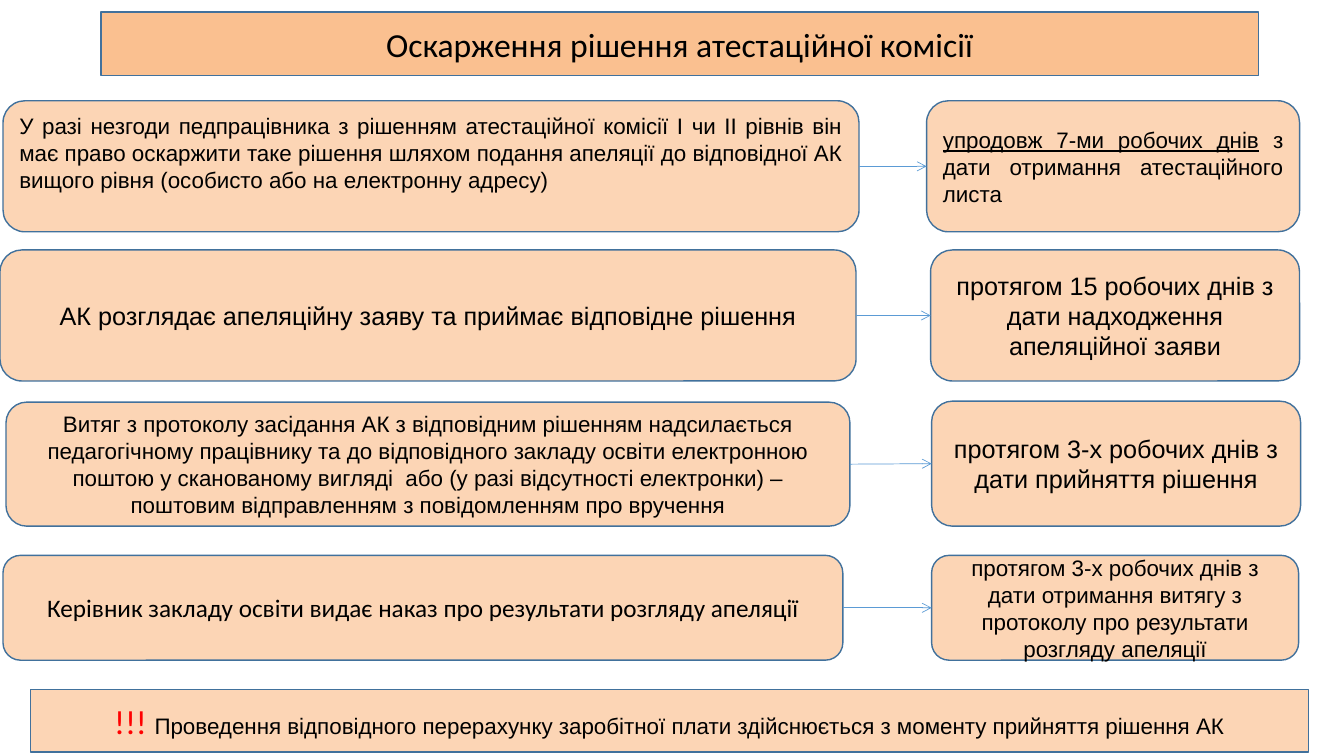
from pptx import Presentation
from pptx.dml.color import RGBColor
from pptx.enum.shapes import MSO_CONNECTOR as CONN, MSO_SHAPE as SHAPE
from pptx.enum.text import MSO_ANCHOR as ANCHOR, MSO_AUTO_SIZE as AUTO, PP_ALIGN as ALIGN
from pptx.oxml.ns import qn
from pptx.util import Inches, Pt
from lxml import etree

PEACH, ORANGE, BORDER, ARROW = "FCD5B5", "FAC090", "41719C", "5B9BD5"
BLACK, RED = "000000", "FF0000"
BODY = {"size": Pt(16), "name": "Arial"}
LARGE = {"size": Pt(18), "name": "Arial"}
ORDER = {"size": Pt(18), "name": "Calibri"}
HEADING = {"size": Pt(24), "name": "Calibri", "bold": False}
FRAME = {"word_wrap": True, "auto_size": AUTO.NONE,
         "margin_left": Inches(0.1), "margin_right": Inches(0.1),
         "margin_top": Inches(0.05), "margin_bottom": Inches(0.05)}

STEPS = [
    {"left": (0.03, 1, 8.49, 1.3), "right": (9.19, 1, 3.7, 1.3),
     "action": [("У разі незгоди педпрацівника з рішенням атестаційної комісії І чи ІІ рівнів "
                 "він має право оскаржити таке рішення шляхом подання апеляції до відповідної "
                 "АК вищого рівня (особисто або на електронну адресу)", BODY, BLACK)],
     "term": [("упродовж 7-ми робочих днів", {**BODY, "underline": True}, BLACK),
              (" з дати отримання атестаційного листа", BODY, BLACK)],
     "align": ALIGN.JUSTIFY, "anchor": ANCHOR.TOP},
    {"left": (0, 2.48, 8.49, 1.3), "right": (9.23, 2.48, 3.66, 1.3),
     "action": [("АК розглядає апеляційну заяву та приймає відповідне рішення", LARGE, BLACK)],
     "term": [("протягом 15 робочих днів з дати надходження апеляційної заяви", LARGE, BLACK)]},
    {"left": (0.06, 3.99, 8.37, 1.23), "right": (9.24, 3.98, 3.66, 1.24),
     "action": [("Витяг з протоколу засідання АК з відповідним рішенням надсилається "
                 "педагогічному працівнику та до відповідного закладу освіти електронною "
                 "поштою у сканованому вигляді  або (у разі відсутності електронки) – "
                 "поштовим відправленням з повідомленням про вручення", BODY, BLACK)],
     "term": [("протягом 3-х робочих днів з дати прийняття рішення", LARGE, BLACK)]},
    {"left": (0.03, 5.51, 8.33, 1.04), "right": (9.24, 5.51, 3.64, 1.04),
     "action": [("Керівник закладу освіти видає наказ про результати розгляду апеляції",
                 ORDER, BLACK)],
     "term": [("протягом 3-х робочих днів з дати отримання витягу з протоколу про "
               "результати розгляду апеляції", BODY, BLACK)]},
]


def rgb(value):
    return RGBColor.from_string(value)


def set_all(target, values):
    for key, value in values.items():
        setattr(target, key, value)


def paint(sp, fill):
    sp.fill.solid()
    sp.fill.fore_color.rgb = rgb(fill)
    sp.line.color.rgb = rgb(BORDER)
    sp.line.width = Pt(1)


def write(sp, runs, align=ALIGN.CENTER, anchor=ANCHOR.MIDDLE):
    tf = sp.text_frame
    set_all(tf, {**FRAME, "vertical_anchor": anchor})
    p = tf.paragraphs[0]
    p.alignment = align
    for text, font, color in runs:
        r = p.add_run()
        r.text = text
        set_all(r.font, font)
        r.font.color.rgb = rgb(color)


def add_box(s, kind, box, runs, **layout):
    sp = s.shapes.add_shape(kind, *map(Inches, box))
    sp.shadow.inherit = False
    paint(sp, PEACH)
    write(sp, runs, **layout)
    return sp


def add_arrow(s, start, end):
    line = s.shapes.add_connector(CONN.STRAIGHT, 0, 0, 0, 0)
    line.begin_connect(start, 3)
    line.end_connect(end, 1)
    line.line.color.rgb = rgb(ARROW)
    line.line.width = Pt(0.5)
    etree.SubElement(line.line._get_or_add_ln(), qn("a:tailEnd"), type="arrow")
    etree.SubElement(line._element.spPr, qn("a:effectLst"))


def add_title(s, box):
    sp = s.shapes.title
    set_all(sp, dict(zip(("left", "top", "width", "height"), map(Inches, box))))
    paint(sp, ORANGE)
    write(sp, [("Оскарження рішення атестаційної комісії", HEADING, BLACK)])


def add_step(s, step):
    align = step.get("align", ALIGN.CENTER)
    action = add_box(s, SHAPE.ROUNDED_RECTANGLE, step["left"], step["action"],
                     align=align, anchor=step.get("anchor", ANCHOR.MIDDLE))
    term = add_box(s, SHAPE.ROUNDED_RECTANGLE, step["right"], step["term"], align=align)
    add_arrow(s, action, term)


def add_note(s, box):
    add_box(s, SHAPE.RECTANGLE, box, [
        ("!!! ", HEADING, RED),
        ("Проведення відповідного перерахунку заробітної плати здійснюється "
         "з моменту прийняття рішення АК", BODY, BLACK)])


def main():
    prs = Presentation()
    prs.slide_width, prs.slide_height = Inches(13.33), Inches(7.5)
    s = prs.slides.add_slide(prs.slide_layouts[5])
    add_title(s, (1, 0.12, 11.48, 0.63))
    for step in STEPS:
        add_step(s, step)
    add_note(s, (0.3, 6.84, 12.68, 0.62))
    prs.save("out.pptx")


if __name__ == "__main__":
    main()
